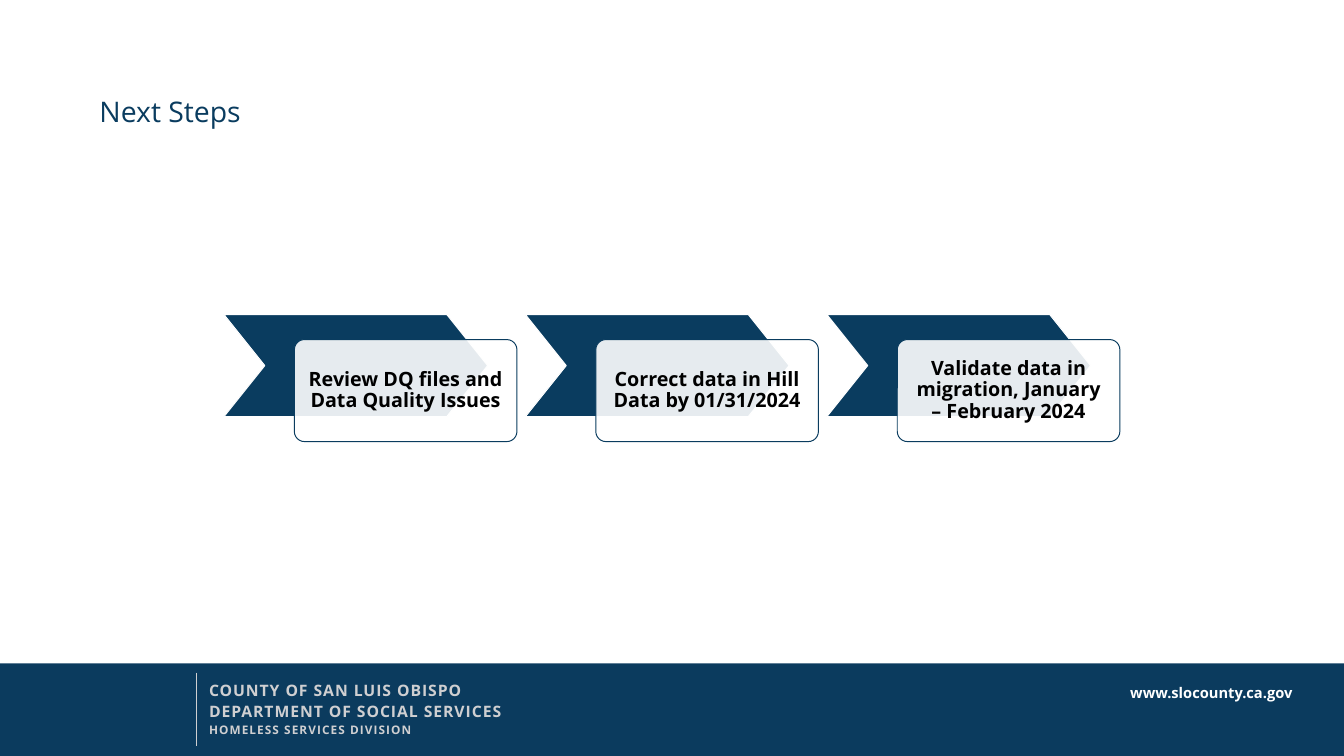
import pptx
import pptx.util
import pptx.dml.color
import pptx.enum.shapes
import pptx.enum.text
import pptx.oxml.ns
import lxml.etree

TITLE = "Next Steps"
STEPS = [
    "Review DQ files and Data Quality Issues",
    "Correct data in Hill Data by 01/31/2024",
    "Validate data in migration, January – February 2024",
]
OFFICE = [
    ("COUNTY OF SAN LUIS OBISPO", 16, 1),
    ("DEPARTMENT OF SOCIAL SERVICES", 16, 1),
    ("HOMELESS SERVICES DIVISION", 12, 1.1),
]
WEBSITE = "www.slocounty.ca.gov"
COLORS = {"navy": "0A3C5F", "band": "0B3B5E", "silver": "CFCFD1", "white": "FFFFFF", "black": "000000"}
FONT = "Open Sans"

SLIDE_W, SLIDE_H = 1365.12, 768.24
BAND_TOP = 674.2
STEP_LEFT, STEP_TOP, STEP_PITCH = 227.5, 319.7, 306.2
ARROW_W, STEP_H = 267.8, 103.7
CARD_DX, CARD_DY, CARD_W = 71.5, 25.4, 226.1

Pt = pptx.util.Pt
SHAPES = pptx.enum.shapes.MSO_SHAPE
ALIGN = pptx.enum.text.PP_ALIGN
ANCHOR = pptx.enum.text.MSO_ANCHOR


def rgb(color):
    return pptx.dml.color.RGBColor.from_string(COLORS[color])


def write(holder, lines, color, bold=True, align=ALIGN.LEFT, anchor=ANCHOR.TOP,
          margins=(7.2, 3.6), line_spacing=None, gap=0):
    frame = holder.text_frame
    frame.word_wrap = True
    frame.vertical_anchor = anchor
    frame.margin_left = frame.margin_right = Pt(margins[0])
    frame.margin_top = frame.margin_bottom = Pt(margins[1])
    for index, (text, size, tracking) in enumerate(lines):
        paragraph = frame.add_paragraph() if index else frame.paragraphs[0]
        paragraph.alignment = align
        paragraph.line_spacing = line_spacing
        if index:
            paragraph.space_before = Pt(gap)
        run = paragraph.add_run()
        run.text = text
        run.font.name = FONT
        run.font.size = Pt(size)
        run.font.bold = bold
        run.font.color.rgb = rgb(color)
        if tracking:
            run._r.get_or_add_rPr().set("spc", str(round(tracking * 100)))


def add_block(slide, kind, box, fill, line=None, corner=None, opacity=None):
    block = slide.shapes.add_shape(kind, *map(Pt, box))
    block.shadow.inherit = False
    block.fill.solid()
    block.fill.fore_color.rgb = rgb(fill)
    if line:
        block.line.color.rgb = rgb(line)
        block.line.width = Pt(1)
    else:
        block.line.fill.background()
    if corner:
        block.adjustments[0] = corner
    if opacity:
        tint = block._element.spPr.find(".//" + pptx.oxml.ns.qn("a:srgbClr"))
        lxml.etree.SubElement(tint, pptx.oxml.ns.qn("a:alpha")).set("val", str(opacity * 1000))
    return block


def add_label(slide, box, lines, color, **style):
    write(slide.shapes.add_textbox(*map(Pt, box)), lines, color, **style)


def add_footer(slide):
    add_block(slide, SHAPES.RECTANGLE, (0, BAND_TOP, SLIDE_W, SLIDE_H - BAND_TOP), "band")
    add_label(slide, (205.2, 687.8, 534.2, 65.5), OFFICE, "silver", gap=2.4)
    add_label(slide, (785.5, 691.2, 534.2, 25.2), [(WEBSITE, 14.9, 0)], "white", align=ALIGN.RIGHT)
    divider = slide.shapes.add_connector(
        pptx.enum.shapes.MSO_CONNECTOR.STRAIGHT, Pt(199.4), Pt(683.6), Pt(199.4), Pt(758.2))
    divider.line.color.rgb = rgb("silver")
    divider.line.width = Pt(1.5)
    lxml.etree.SubElement(divider._element.spPr, pptx.oxml.ns.qn("a:effectLst"))


def add_step(slide, index, step):
    left = STEP_LEFT + index * STEP_PITCH
    add_block(slide, SHAPES.CHEVRON, (left, STEP_TOP, ARROW_W, STEP_H), "navy", "white", 0.4)
    card = add_block(slide, SHAPES.ROUNDED_RECTANGLE,
                     (left + CARD_DX, STEP_TOP + CARD_DY, CARD_W, STEP_H),
                     "white", "navy", 0.1, opacity=90)
    write(card, [(step, 20, 0)], "black", align=ALIGN.CENTER, anchor=ANCHOR.MIDDLE,
          margins=(11, 11), line_spacing=0.9)


def main():
    deck = pptx.Presentation()
    deck.slide_width, deck.slide_height = Pt(SLIDE_W), Pt(SLIDE_H)
    slide = deck.slides.add_slide(deck.slide_layouts[6])
    add_footer(slide)
    add_label(slide, (94, 41, 1177.9, 148.3), [(TITLE, 28.8, 0)], "navy", bold=False,
              anchor=ANCHOR.MIDDLE, line_spacing=0.9)
    for index, step in enumerate(STEPS):
        add_step(slide, index, step)
    deck.save("out.pptx")


if __name__ == "__main__":
    main()
